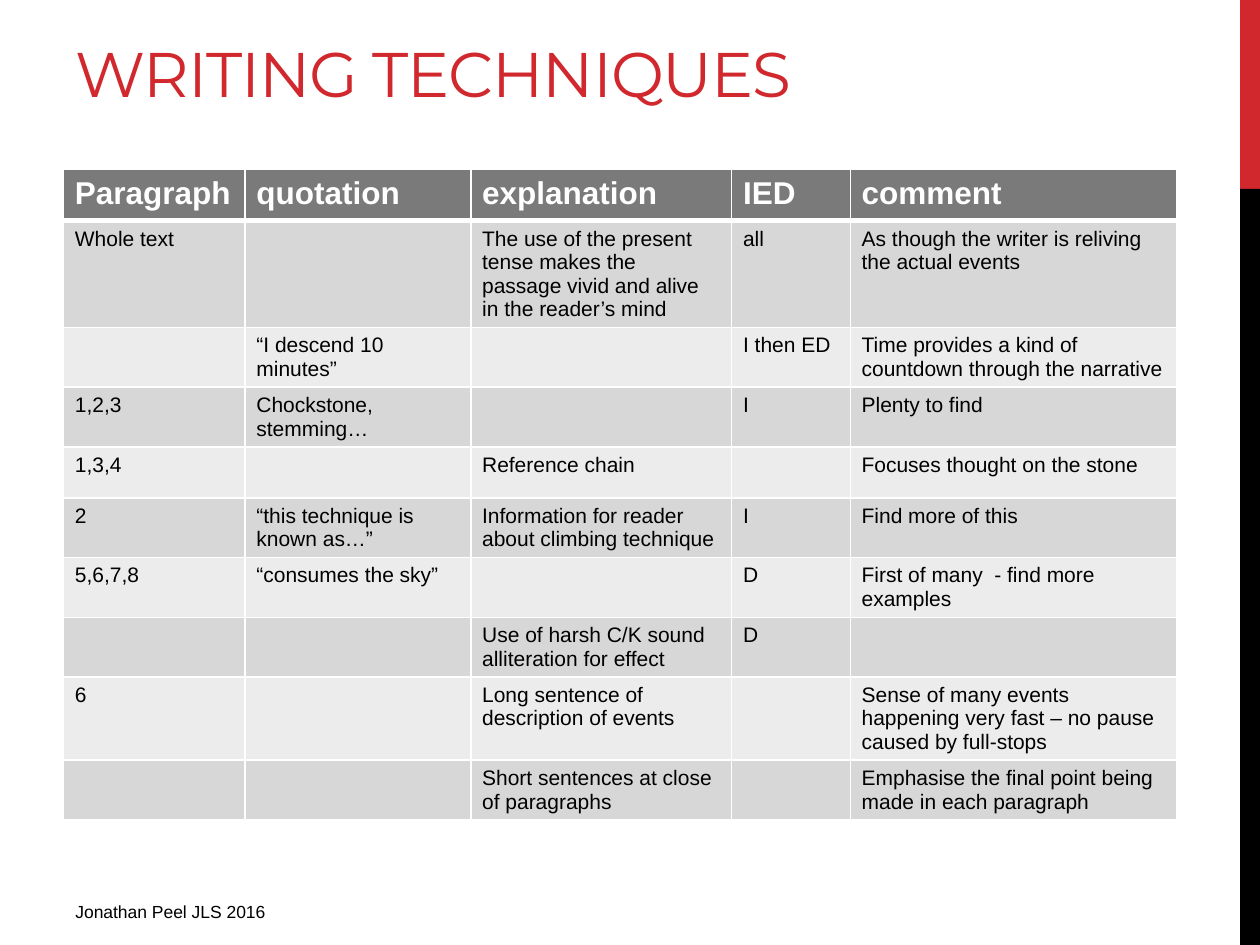
from dataclasses import dataclass

from lxml import etree
from pptx import Presentation
from pptx import util as u
from pptx.dml.color import RGBColor
from pptx.enum import shapes, text
from pptx.oxml import ns

RED = RGBColor(0xD1, 0x28, 0x2E)
BLACK = RGBColor(0x00, 0x00, 0x00)
WHITE = RGBColor(0xFF, 0xFF, 0xFF)
HEADER_GREY = RGBColor(0x7A, 0x7A, 0x7A)
DARK_BAND = RGBColor(0xD7, 0xD7, 0xD7)
LIGHT_BAND = RGBColor(0xEC, 0xEC, 0xEC)

TITLE_FONT = {"name": "Montserrat", "size": u.Pt(36), "bold": False, "color": RED}
HEADER_FONT = {"name": "Arial", "size": u.Pt(18), "bold": True, "color": WHITE}
BODY_FONT = {"name": "Arial", "size": u.Pt(12), "bold": False, "color": BLACK}
FOOTER_FONT = {"name": "Arial", "size": u.Pt(10), "bold": False, "color": BLACK}

COLUMN_WIDTHS = (3.66, 4.55, 5.26, 2.39, 6.58)
ROW_HEIGHT = 1.03
ROWS = (
    ("Paragraph", "quotation", "explanation", "IED", "comment"),
    ("Whole text", "",
     "The use of the present tense makes the passage vivid and alive in the reader’s mind",
     "all", "As though the writer is reliving the actual events"),
    ("", "“I descend 10 minutes”", "", "I then ED",
     "Time provides a kind of countdown through the narrative"),
    ("1,2,3", "Chockstone, stemming…", "", "I", "Plenty to find"),
    ("1,3,4", "", "Reference chain", "", "Focuses thought on the stone"),
    ("2", "“this technique is known as…”",
     "Information for reader about climbing technique", "I", "Find more of this"),
    ("5,6,7,8", "“consumes the sky”", "", "D", "First of many  - find more examples"),
    ("", "", "Use of harsh C/K sound alliteration for effect", "D", ""),
    ("6", "", "Long sentence of description of events", "",
     "Sense of many events happening very fast – no pause caused by full-stops"),
    ("", "", "Short sentences at close of paragraphs", "",
     "Emphasise the final point being made in each paragraph"),
)


@dataclass(frozen=True)
class Box:
    left: float
    top: float
    width: float
    height: float

    def lengths(self) -> tuple:
        return tuple(u.Cm(value) for value in (self.left, self.top, self.width, self.height))


@dataclass(frozen=True)
class SideBar:
    box: Box
    color: RGBColor


SIDE_BARS = (
    SideBar(Box(25, 0, 0.4, 3.81), RED),
    SideBar(Box(25, 3.81, 0.4, 15.24), BLACK),
)
TITLE_BOX = Box(1.27, -1.47, 20.75, 3.81)
TABLE_BOX = Box(1.28, 3.42, sum(COLUMN_WIDTHS), ROW_HEIGHT * len(ROWS))
FOOTER_BOX = Box(1.27, 18.03, 9.53, 0.79)


def write_text(frame, words: str, font_format: dict):
    paragraph = frame.paragraphs[0]
    paragraph.alignment = text.PP_ALIGN.LEFT
    run = paragraph.add_run()
    run.text = words
    for name, value in font_format.items():
        if name == "color":
            run.font.color.rgb = value
        else:
            setattr(run.font, name, value)
    return run


def draw_side_bar(slide, bar: SideBar) -> None:
    shape = slide.shapes.add_shape(shapes.MSO_SHAPE.RECTANGLE, *bar.box.lengths())
    shape.shadow.inherit = False
    shape.fill.solid()
    shape.fill.fore_color.rgb = bar.color
    shape.line.fill.background()


def draw_title(slide, words: str) -> None:
    title = slide.shapes.title
    title.left, title.top, title.width, title.height = TITLE_BOX.lengths()
    frame = title.text_frame
    for name, value in {"word_wrap": True, "auto_size": text.MSO_AUTO_SIZE.NONE,
                        "vertical_anchor": text.MSO_ANCHOR.BOTTOM}.items():
        setattr(frame, name, value)
    run = write_text(frame, words, TITLE_FONT)
    run.font._element.set("spc", "-60")


def add_borders(cell, points: dict) -> None:
    properties = cell._tc.get_or_add_tcPr()
    for side, width in points.items():
        line = etree.SubElement(properties, ns.qn(f"a:ln{side}"), w=str(u.Pt(width)))
        fill = etree.SubElement(line, ns.qn("a:solidFill"))
        etree.SubElement(fill, ns.qn("a:srgbClr"), val=str(WHITE))


def draw_table(slide) -> None:
    table = slide.shapes.add_table(len(ROWS), len(COLUMN_WIDTHS), *TABLE_BOX.lengths()).table
    for column, width in zip(table.columns, COLUMN_WIDTHS):
        column.width = u.Cm(width)
    for row_index, row in enumerate(ROWS):
        table.rows[row_index].height = u.Cm(ROW_HEIGHT)
        is_header = row_index == 0
        band = DARK_BAND if row_index % 2 else LIGHT_BAND
        borders = {"L": 1, "R": 1, "T": 3 if row_index == 1 else 1, "B": 3 if is_header else 1}
        for column_index, words in enumerate(row):
            cell = table.cell(row_index, column_index)
            add_borders(cell, borders)
            cell.fill.solid()
            cell.fill.fore_color.rgb = HEADER_GREY if is_header else band
            cell.margin_left = cell.margin_right = u.Cm(0.23)
            if words:
                write_text(cell.text_frame, words, HEADER_FONT if is_header else BODY_FONT)


def draw_footer(slide, words: str) -> None:
    frame = slide.shapes.add_textbox(*FOOTER_BOX.lengths()).text_frame
    frame.word_wrap = True
    write_text(frame, words, FOOTER_FONT)


def main() -> None:
    presentation = Presentation()
    presentation.slide_width, presentation.slide_height = u.Cm(25.4), u.Cm(19.05)
    slide = presentation.slides.add_slide(presentation.slide_layouts[5])
    for bar in SIDE_BARS:
        draw_side_bar(slide, bar)
    draw_title(slide, "WRITING TECHNIQUES")
    draw_table(slide)
    draw_footer(slide, "Jonathan Peel JLS 2016")
    presentation.save("out.pptx")


if __name__ == "__main__":
    main()
